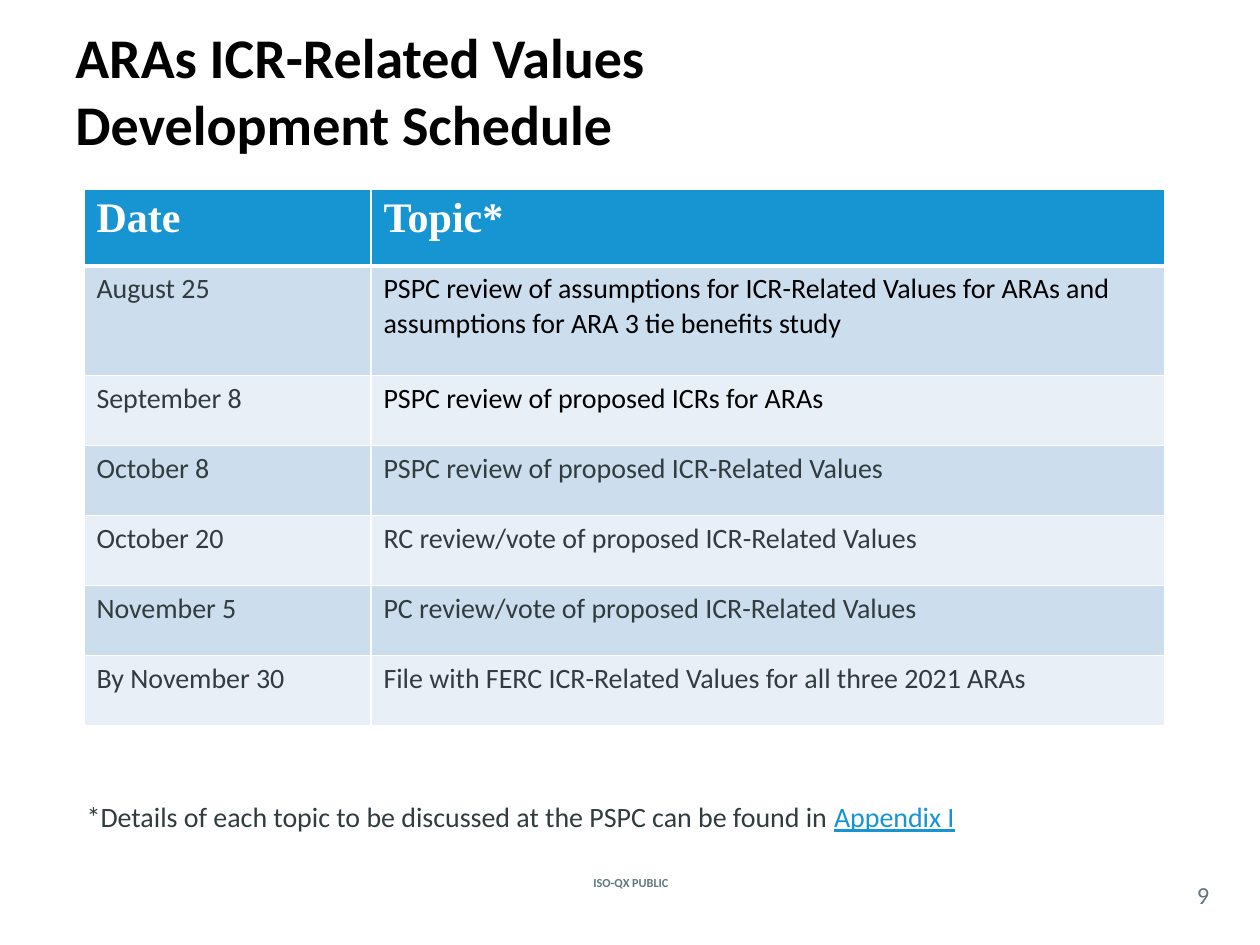
import pptx
import pptx.util
import pptx.dml.color
import pptx.enum.text
from lxml import etree
from pptx.oxml.ns import qn

Pt = pptx.util.Pt
ALIGN = pptx.enum.text.PP_ALIGN
ANCHOR = pptx.enum.text.MSO_ANCHOR

COLORS = {
    "black": "000000", "white": "FFFFFF", "text": "313C3F", "muted": "62777F",
    "accent": "1795D2", "band_dark": "CCDDEE", "band_light": "E8EFF7",
}

# Content
TITLE = "ARAs ICR-Related Values\vDevelopment Schedule"
HEADER = ("Date", "Topic*")
SCHEDULE = [  # date, topic, topic colour
    ("August 25", "PSPC review of assumptions for ICR-Related Values for ARAs "
     "and assumptions for ARA 3 tie benefits study", "black"),
    ("September 8", "PSPC review of proposed ICRs for ARAs", "black"),
    ("October 8", "PSPC review of proposed ICR-Related Values", "text"),
    ("October 20", "RC review/vote of proposed ICR-Related Values", "text"),
    ("November 5", "PC review/vote of proposed ICR-Related Values", "text"),
    ("By November 30", "File with FERC ICR-Related Values for all three 2021 ARAs", "text"),
]
NOTE = "*Details of each topic to be discussed at the PSPC can be found in "
NOTE_REFERENCE = "Appendix I"
CLASSIFICATION = "ISO-QX PUBLIC"
PAGE_NUMBER = "9"

# Table geometry
TABLE_LEFT, TABLE_TOP = 48, 108
COLUMN_WIDTHS = (164, 453.5)
ROW_HEIGHTS = [44, 62.5] + [40] * (len(SCHEDULE) - 1)


def rgb(name):
    return pptx.dml.color.RGBColor.from_string(COLORS[name])


def style(run, size, color, bold=False, font="Calibri"):
    run.font.size = Pt(size)
    run.font.name = font
    run.font.bold = bold
    run.font.color.rgb = rgb(color)


def add_text(s, box, text, size, color, bold=False, align=ALIGN.LEFT,
             anchor=ANCHOR.MIDDLE, inset=None):
    tf = s.shapes.add_textbox(*map(Pt, box)).text_frame
    tf.word_wrap = True
    tf.vertical_anchor = anchor
    if inset is not None:
        tf.margin_left = tf.margin_right = tf.margin_top = tf.margin_bottom = Pt(inset)
    p = tf.paragraphs[0]
    p.text = text
    p.alignment = align
    for r in p.runs:
        style(r, size, color, bold)
    return p


def set_borders(cell, top, bottom):
    props = cell._tc.get_or_add_tcPr()
    widths = {"lnL": 1, "lnR": 1, "lnT": top, "lnB": bottom}
    for i, (tag, width) in enumerate(widths.items()):
        line = etree.Element(qn("a:" + tag), w=str(Pt(width)))
        fill = etree.SubElement(line, qn("a:solidFill"))
        etree.SubElement(fill, qn("a:srgbClr"), val=COLORS["white"])
        props.insert(i, line)


def fill_cell(cell, text, fill, size, color, bold=False, font="Calibri"):
    cell.text = text
    style(cell.text_frame.paragraphs[0].runs[0], size, color, bold, font)
    cell.fill.solid()
    cell.fill.fore_color.rgb = rgb(fill)


def add_schedule(s):
    table = s.shapes.add_table(
        len(ROW_HEIGHTS), len(COLUMN_WIDTHS), Pt(TABLE_LEFT), Pt(TABLE_TOP),
        Pt(sum(COLUMN_WIDTHS)), Pt(sum(ROW_HEIGHTS))).table
    for column, width in zip(table.columns, COLUMN_WIDTHS):
        column.width = Pt(width)
    for row, height in zip(table.rows, ROW_HEIGHTS):
        row.height = Pt(height)

    for c, label in enumerate(HEADER):
        cell = table.cell(0, c)
        fill_cell(cell, label, "accent", 24, "white", True, "Times New Roman")
        set_borders(cell, top=1, bottom=3)

    for i, (date, topic, topic_color) in enumerate(SCHEDULE, start=1):
        band = "band_dark" if i % 2 else "band_light"
        for c, (text, color) in enumerate([(date, "text"), (topic, topic_color)]):
            cell = table.cell(i, c)
            fill_cell(cell, text, band, 16, color)
            set_borders(cell, top=3 if i == 1 else 1, bottom=1)


def main():
    prs = pptx.Presentation()
    prs.slide_width, prs.slide_height = Pt(720), Pt(540)
    s = prs.slides.add_slide(prs.slide_layouts[6])

    # Footer and title
    add_text(s, (307.5, 498.25, 106, 12.25), CLASSIFICATION, 7, "muted", True, ALIGN.CENTER)
    add_text(s, (36, 6, 648, 90), TITLE, 32, "black", True)
    add_text(s, (672, 501, 31, 21), PAGE_NUMBER, 14, "muted", align=ALIGN.CENTER, inset=0)

    # Schedule table
    add_schedule(s)

    # Footnote
    p = add_text(s, (42.5, 453.5, 653, 26.5), NOTE, 16, "text", anchor=ANCHOR.TOP)
    r = p.add_run()
    r.text = NOTE_REFERENCE
    style(r, 16, "accent")
    r.font.underline = True

    prs.save("out.pptx")


if __name__ == "__main__":
    main()
